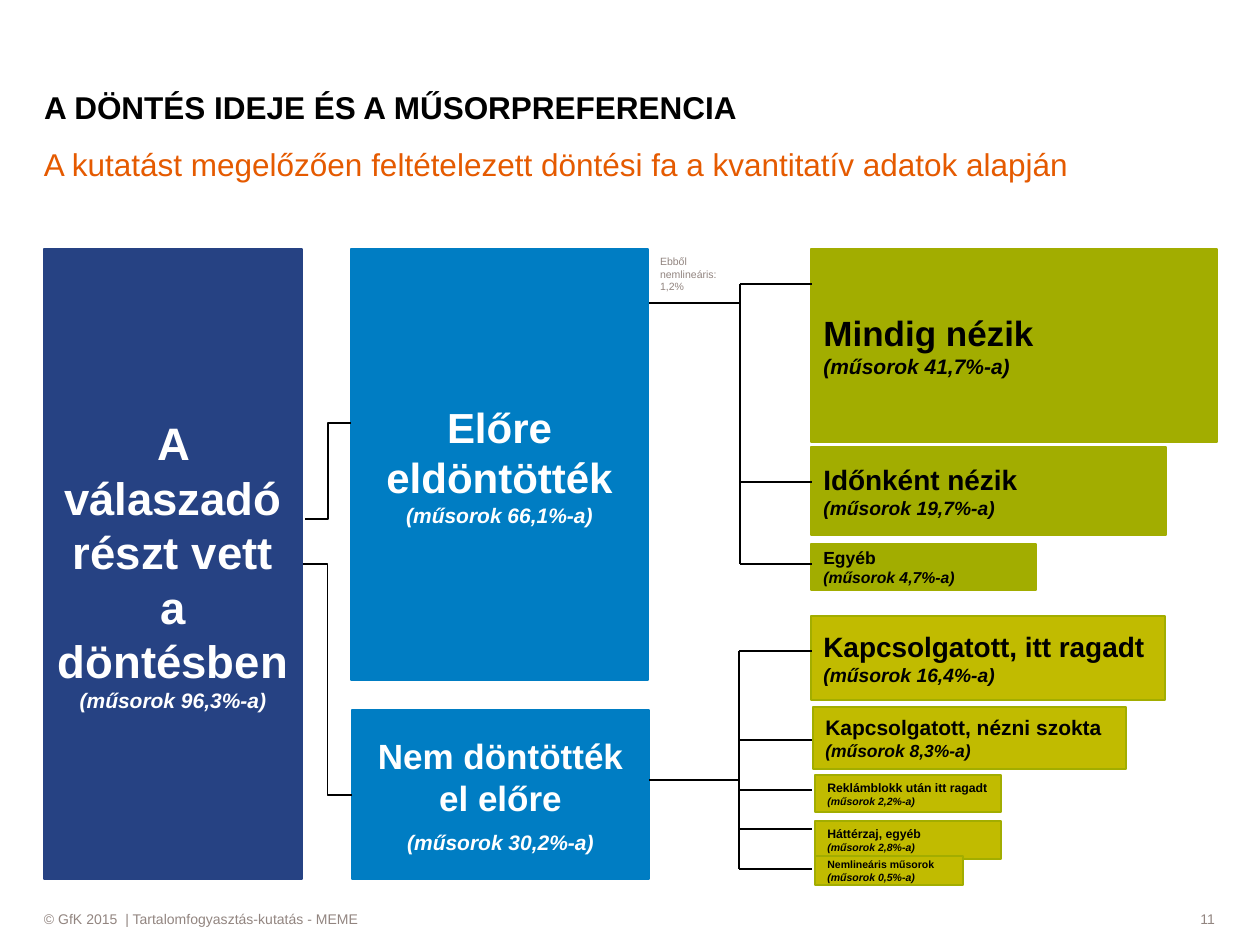
from pptx import Presentation
from pptx.dml.color import RGBColor
from pptx.enum.shapes import MSO_CONNECTOR, MSO_SHAPE
from pptx.enum.text import MSO_ANCHOR, MSO_AUTO_SIZE, PP_ALIGN
from pptx.oxml.ns import qn
from pptx.util import Emu, Inches, Pt

RECT = MSO_SHAPE.RECTANGLE
STRAIGHT, ELBOW = MSO_CONNECTOR.STRAIGHT, MSO_CONNECTOR.ELBOW
LEFT, CENTER, RIGHT = PP_ALIGN.LEFT, PP_ALIGN.CENTER, PP_ALIGN.RIGHT
TOP, MIDDLE, BOTTOM = MSO_ANCHOR.TOP, MSO_ANCHOR.MIDDLE, MSO_ANCHOR.BOTTOM
NO_FIT = MSO_AUTO_SIZE.NONE

FONT = "Arial"
BLACK, WHITE, GREY, ORANGE = "000000", "FFFFFF", "928580", "E55A00"
NAVY, BLUE, GREEN, LIME = "264283", "007DC3", "A2AD00", "C1BB00"

# Content: lengths in px (126 to the inch), text sizes in points
TITLE = ("A DÖNTÉS IDEJE ÉS A MŰSORPREFERENCIA", (44, 37, 873, 89))
# text, box, size, colour, alignment, anchor
LABELS = [
    ("A kutatást megelőzően feltételezett döntési fa a kvantitatív adatok alapján",
     (44, 145, 1171, 39), 18, ORANGE, LEFT, TOP),
    ("Ebből nemlineáris:1,2%", (660, 255, 59, 49), 6, GREY, LEFT, TOP),
    ("© GfK 2015  | Tartalomfogyasztás-kutatás - MEME",
     (44, 909, 973, 20), 8, GREY, LEFT, MIDDLE),
    ("11", (1037, 909, 178, 20), 8, GREY, RIGHT, MIDDLE),
]
# name, size, share, size, box
DECISIONS = [
    ("A válaszadó részt vett a döntésben", 26, "96,3", 12, (44, 249, 258, 630)),
    ("Előre eldöntötték", 24, "66,1", 12, (351, 249, 297, 431)),
    ("Nem döntötték el előre", 20, "30,2", 12, (352, 710, 297, 169)),
]
DECIDED = [
    ("Mindig nézik", 20, "41,7", 12, (811, 249, 406, 193)),
    ("Időnként nézik", 16, "19,7", 11, (811, 447, 355, 88)),
    ("Egyéb", 10, "4,7", 9, (811, 544, 225, 46)),
]
UNDECIDED = [
    ("Kapcsolgatott, itt ragadt", 16, "16,4", 11, (811, 616, 354, 84)),
    ("Kapcsolgatott, nézni szokta", 12, "8,3", 10, (813, 707, 313, 62)),
    ("Reklámblokk után itt ragadt", 7, "2,2", 6, (815, 775, 186, 37)),
    ("Háttérzaj, egyéb", 7, "2,8", 6, (815, 821, 186, 38)),
    ("Nemlineáris műsorok", 6, "0,5", 6, (815, 856, 148, 29)),
]
# boxes, fill, line, text colour, alignment
GROUPS = [
    (DECISIONS[:1], NAVY, NAVY, WHITE, CENTER),
    (DECISIONS[1:], BLUE, BLUE, WHITE, CENTER),
    (DECIDED, GREEN, GREEN, BLACK, LEFT),
    (UNDECIDED, LIME, GREEN, BLACK, LEFT),
]
ELBOWS = [(303, 564, 352, 795), (305, 519, 351, 423)]
# stem start x, stem y, trunk x, branch end x, branch ys
BRANCHES = [
    (649, 303, 740, 812, [284, 482, 564]),
    (649, 780, 739, 812, [651, 740, 790, 829, 869]),
]


def px(*values):
    return [Emu(round(v * 914400 / 126)) for v in values]


def color(hex_string):
    return RGBColor.from_string(hex_string)


def set_frame(tf, anchor, inset=0):
    side, edge = Inches(inset), Inches(inset / 2)
    frame = dict(word_wrap=True, auto_size=NO_FIT, vertical_anchor=anchor,
                 margin_left=side, margin_right=side,
                 margin_top=edge, margin_bottom=edge)
    for name, value in frame.items():
        setattr(tf, name, value)


def write(p, text, size, hex_string, align=LEFT, **style):
    p.alignment = align
    r = p.add_run()
    r.text = text
    for name, value in dict(name=FONT, size=Pt(size), **style).items():
        setattr(r.font, name, value)
    r.font.color.rgb = color(hex_string)


def add_box(s, item, fill, line, ink, align):
    name, name_size, share, share_size, box = item
    sp = s.shapes.add_shape(RECT, *px(*box))
    sp.shadow.inherit = False
    sp.fill.solid()
    sp.fill.fore_color.rgb = color(fill)
    sp.line.color.rgb = color(line)
    sp.line.width = Pt(0.75)
    tf = sp.text_frame
    set_frame(tf, MIDDLE, 0.1)
    write(tf.paragraphs[0], name, name_size, ink, align, bold=True)
    p = tf.add_paragraph()
    write(p, f"(műsorok {share}%-a)", share_size, ink, align, bold=True, italic=True)
    return p


def add_line(s, kind, *ends):
    line = s.shapes.add_connector(kind, *px(*ends))
    line.line.color.rgb = color(BLACK)
    line.line.width = Pt(0.75)
    sp_pr = line._element.spPr
    sp_pr.append(sp_pr.makeelement(qn("a:effectLst"), {}))


def main():
    prs = Presentation()
    prs.slide_width, prs.slide_height = Inches(10), Inches(7.5)
    s = prs.slides.add_slide(prs.slide_layouts[5])

    # Title
    text, box = TITLE
    title = s.shapes.title
    title.left, title.top, title.width, title.height = px(*box)
    set_frame(title.text_frame, BOTTOM)
    write(title.text_frame.paragraphs[0], text, 18, BLACK, bold=True)

    # Subtitle, note and footer
    for text, box, size, ink, align, anchor in LABELS:
        tf = s.shapes.add_textbox(*px(*box)).text_frame
        set_frame(tf, anchor)
        write(tf.paragraphs[0], text, size, ink, align)

    # Boxes of the decision tree
    for items, *look in GROUPS:
        for item in items:
            share = add_box(s, item, *look)
            if item is DECISIONS[2]:
                share.space_before = Pt(6)

    # Connectors
    for ends in ELBOWS:
        add_line(s, ELBOW, *ends)
    for start, stem_y, trunk, end, ys in BRANCHES:
        add_line(s, STRAIGHT, start, stem_y, trunk, stem_y)
        add_line(s, STRAIGHT, trunk, ys[0], trunk, ys[-1])
        for y in ys:
            add_line(s, STRAIGHT, trunk, y, end, y)

    prs.save("out.pptx")


if __name__ == "__main__":
    main()
